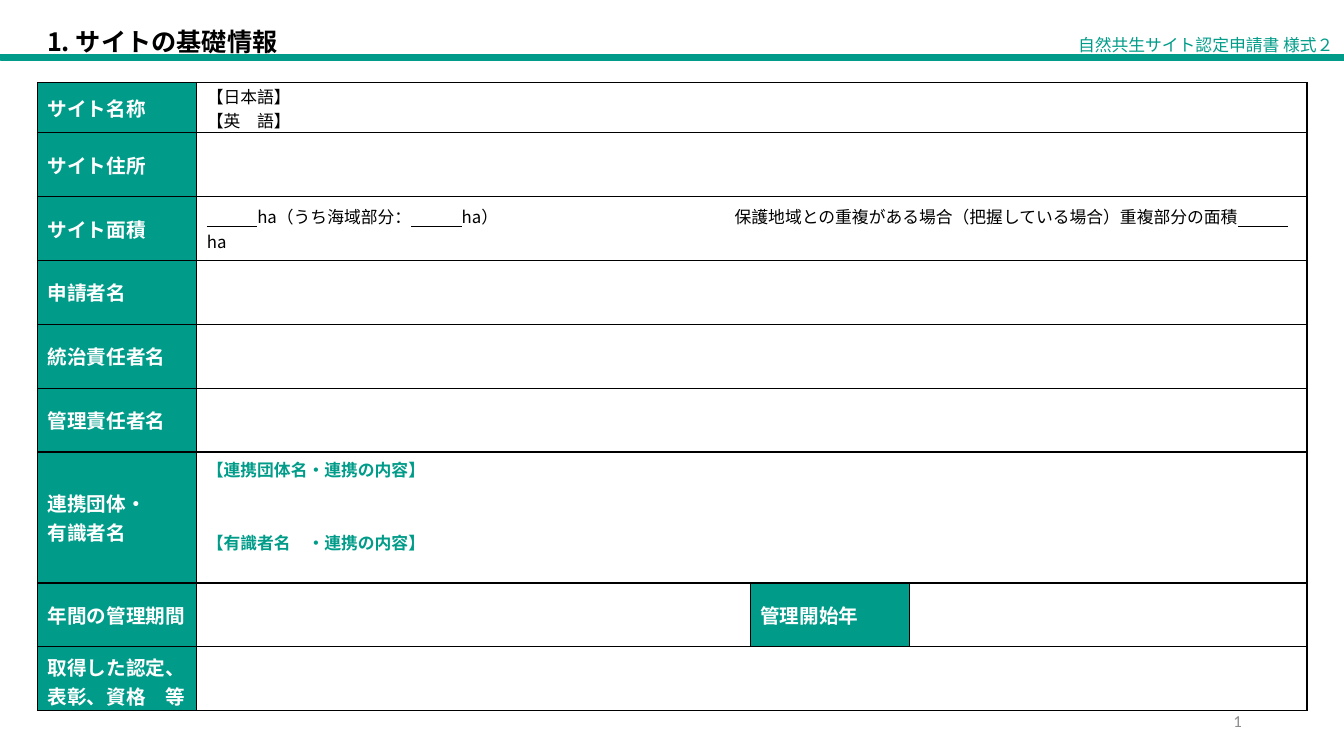
from pptx import Presentation
from pptx import util as u
from pptx.dml.color import RGBColor
from pptx.enum import shapes, text
from pptx.oxml import parse_xml
from pptx.oxml.ns import nsdecls
from lxml import etree

THEME = {
    "green": RGBColor.from_string("009C89"),
    "white": RGBColor.from_string("FFFFFF"),
    "black": RGBColor.from_string("000000"),
    "gray": RGBColor.from_string("8C8C8C"),
    "font": "Noto Sans CJK JP",
    "number_font": "Calibri",
    "title": 18,
    "label": 14,
    "body": 12,
}
ANCHOR, ALIGN = text.MSO_ANCHOR, text.PP_ALIGN


def add_run(paragraph, words, size, color, bold=False, underline=False, font="font"):
    run = paragraph.add_run()
    run.text = words
    run.font.size = u.Pt(THEME[size])
    run.font.color.rgb = THEME[color]
    run.font.bold = bold
    run.font.underline = underline
    run.font.name = THEME[font]
    east_asian = parse_xml(f'<a:ea {nsdecls("a")} typeface="{THEME[font]}"/>')
    run.font._element.find("{*}latin").addnext(east_asian)


def fill_lines(frame, lines, size, color, bold):
    for index, line in enumerate(lines):
        paragraph = frame.add_paragraph() if index else frame.paragraphs[0]
        add_run(paragraph, line, size, color, bold)


presentation = Presentation()
presentation.slide_width, presentation.slide_height = u.Pt(960), u.Pt(540)
slide = presentation.slides.add_slide(presentation.slide_layouts[6])

captions = [
    ("1", (678.2, 500.4, 216, 28.8), ALIGN.RIGHT, "body", "gray", False, "number_font"),
    ("自然共生サイト認定申請書 様式２", (621.4, 20.9, 338.4, 21.6), ALIGN.RIGHT, "body", "green", False, "font"),
    ("1. サイトの基礎情報", (26.6, 15.1, 480, 28.8), ALIGN.JUSTIFY, "title", "black", True, "font"),
]
for words, box, align, size, color, bold, font in captions:
    frame = slide.shapes.add_textbox(*map(u.Pt, box)).text_frame
    frame.word_wrap = True
    frame.vertical_anchor = ANCHOR.MIDDLE
    frame.paragraphs[0].alignment = align
    add_run(frame.paragraphs[0], words, size, color, bold, font=font)

labels = [
    ["サイト名称"], ["サイト住所"], ["サイト面積"], ["申請者名"], ["統治責任者名"],
    ["管理責任者名"], ["連携団体・", "有識者名"], ["年間の管理期間"],
    ["取得した認定、表彰、資格　等"],
]
NAME, AREA, PARTNERS, PERIOD, AWARDS = 0, 2, 6, 7, 8
widths = [113.8, 395.3, 113.8, 284]
heights = [45.6] * len(labels)
heights[NAME], heights[PARTNERS] = 36, 93.6

table = slide.shapes.add_table(
    len(heights), len(widths), u.Pt(26.8), u.Pt(58.9), u.Pt(sum(widths)), u.Pt(sum(heights))
).table
table.first_row = table.horz_banding = False
for column, width in zip(table.columns, widths):
    column.width = u.Pt(width)
for row, height in zip(table.rows, heights):
    row.height = u.Pt(height)

for cell in table.iter_cells():
    cell.vertical_anchor = ANCHOR.MIDDLE
    properties = cell._tc.get_or_add_tcPr()
    for side in ("lnL", "lnR", "lnT", "lnB"):
        properties.append(parse_xml(
            f'<a:{side} {nsdecls("a")} w="12700"><a:solidFill>'
            f'<a:srgbClr val="{THEME["black"]}"/></a:solidFill></a:{side}>'))
    cell.fill.solid()
    cell.fill.fore_color.rgb = THEME["white"]

label_cells = [(table.cell(index, 0), lines) for index, lines in enumerate(labels)]
label_cells.append((table.cell(PERIOD, 2), ["管理開始年"]))
for cell, lines in label_cells:
    cell.fill.fore_color.rgb = THEME["green"]
    fill_lines(cell.text_frame, lines, "label", "white", True)
table.cell(AWARDS, 0).margin_bottom = 0

for index in range(len(labels)):
    if index != PERIOD:
        table.cell(index, 1).merge(table.cell(index, 3))

name_cell = table.cell(NAME, 1)
name_cell.margin_top, name_cell.margin_bottom = u.Pt(1), 0
fill_lines(name_cell.text_frame, ["【日本語】", "【英　語】"], "body", "black", False)

area = table.cell(AREA, 1).text_frame.paragraphs[0]
tabs = etree.SubElement(area._p.get_or_add_pPr(), "{http://schemas.openxmlformats.org/drawingml/2006/main}tabLst")
tabs.append(parse_xml(f'<a:tab {nsdecls("a")} pos="{u.Pt(377)}" algn="l"/>'))
for words in (
    "ha（うち海域部分：",
    "ha）\t保護地域との重複がある場合（把握している場合）重複部分の面積",
    "ha",
):
    add_run(area, "　　　", "body", "black", underline=True)
    add_run(area, words, "body", "black")

partners = table.cell(PARTNERS, 1)
partners.vertical_anchor = ANCHOR.TOP
fill_lines(partners.text_frame, ["【連携団体名・連携の内容】", "【有識者名　・連携の内容】"], "body", "green", True)
partners.text_frame.paragraphs[1].space_before = u.Pt(35)

# The blanks must precede each unit in the area row.
runs = area.runs
assert len(runs) == 6

rule = slide.shapes.add_shape(shapes.MSO_SHAPE.RECTANGLE, u.Pt(0.5), u.Pt(39), u.Pt(959.5), u.Pt(3.8))
rule.shadow.inherit = False
rule.fill.solid()
rule.fill.fore_color.rgb = THEME["green"]
rule.line.color.rgb = THEME["green"]
rule.line.width = u.Pt(1)

presentation.save("out.pptx")
